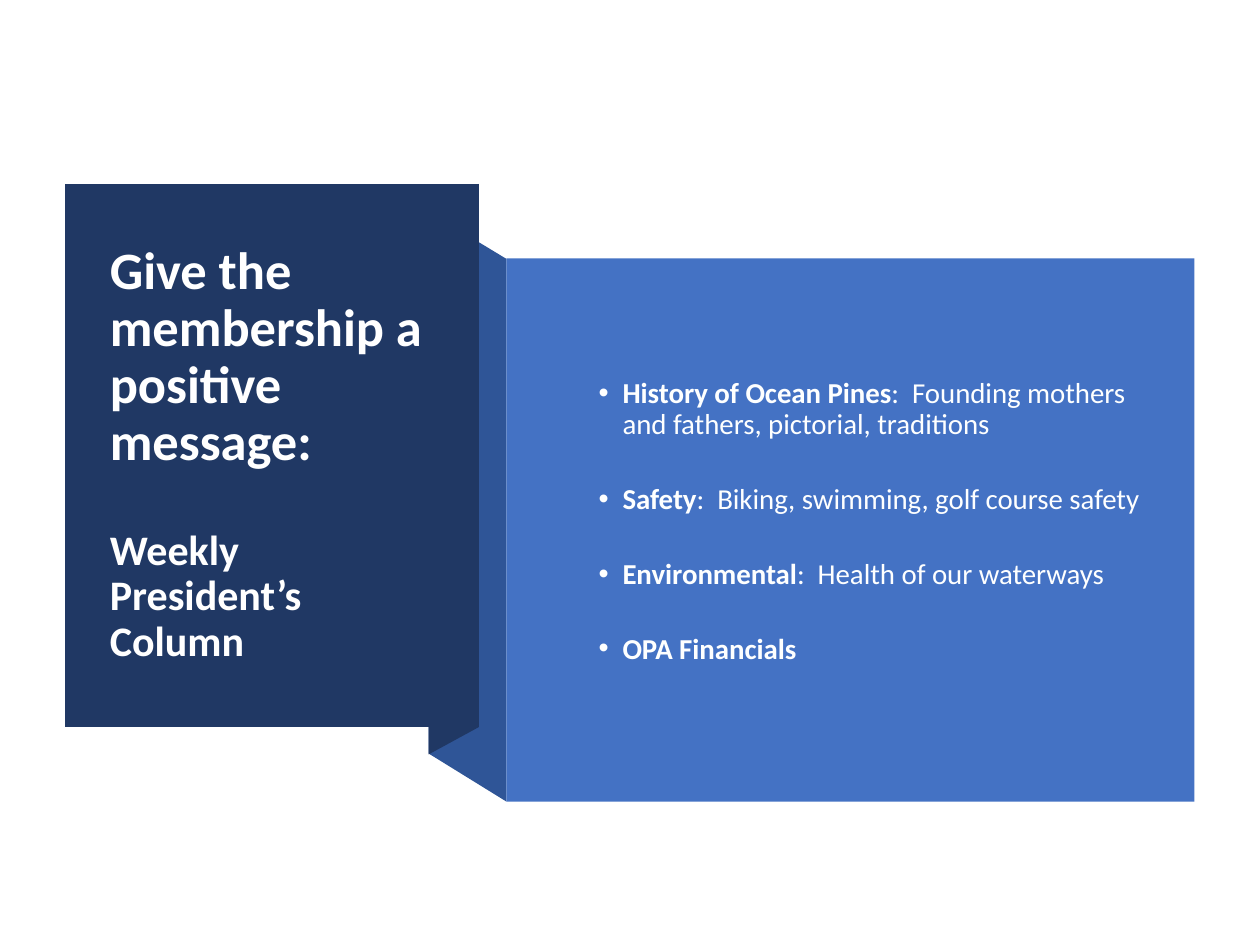
from lxml import etree
from pptx import Presentation
from pptx.dml.color import RGBColor
from pptx.enum.shapes import MSO_SHAPE
from pptx.enum.text import MSO_ANCHOR, MSO_AUTO_SIZE, PP_ALIGN
from pptx.oxml.ns import qn
from pptx.util import Cm, Pt

FONT = "Calibri"
COLORS = {"navy": "203864", "fold": "2F5597", "panel": "4472C4",
          "title": "FFFFFF", "body": "FEFFFF"}

# Content: (text, size, space before)
TITLE = [("Give the membership a positive message:", 30, 0),
         ("Weekly President’s Column", 24, 33)]
TOPICS = [("History of Ocean Pines", ":  Founding mothers and fathers, pictorial, traditions"),
          ("Safety", ":  Biking, swimming, golf course safety"),
          ("Environmental", ":  Health of our waterways"),
          ("OPA Financials", "")]
TOPIC_SIZE, TOPIC_GAP = 16.5, 25

# Ribbon edges in cm
CARD_LEFT, CARD_RIGHT, CARD_TOP, CARD_BOTTOM = 1.32, 9.65, 3.71, 14.66
FOLD_LEFT, PANEL_LEFT = 8.64, 10.21
PANEL_TOP, PANEL_WIDTH, PANEL_HEIGHT = 5.21, 13.87, 10.95
RIBBONS = [
    ("fold", [(PANEL_LEFT, 16.16), (FOLD_LEFT, 15.19), (FOLD_LEFT, 4.27), (PANEL_LEFT, 5.22)]),
    ("navy", [(CARD_RIGHT, CARD_BOTTOM), (FOLD_LEFT, 15.21), (FOLD_LEFT, 4.24),
              (CARD_RIGHT, CARD_TOP)]),
    ("navy", [(CARD_LEFT, CARD_TOP), (CARD_RIGHT, CARD_TOP),
              (CARD_RIGHT, CARD_BOTTOM), (CARD_LEFT, CARD_BOTTOM)]),
]


def paint(shape, color):
    shape.shadow.inherit = False
    shape.fill.solid()
    shape.fill.fore_color.rgb = RGBColor.from_string(COLORS[color])
    shape.line.fill.background()


def prepare(frame):
    frame.word_wrap = True
    frame.auto_size = MSO_AUTO_SIZE.NONE
    frame.vertical_anchor = MSO_ANCHOR.MIDDLE


def add_para(frame, index, space_before):
    para = frame.add_paragraph() if index else frame.paragraphs[0]
    para.alignment = PP_ALIGN.LEFT
    para.line_spacing = 0.9
    para.space_before = Pt(space_before if index else 0)
    para.space_after = Pt(0)
    return para


def add_run(para, text, size, color, bold):
    span = para.add_run()
    span.text = text
    span.font.name = FONT
    span.font.size = Pt(size)
    span.font.bold = bold
    span.font.color.rgb = RGBColor.from_string(COLORS[color])


def add_bullet(para):
    props = para._p.get_or_add_pPr()
    props.set("marL", str(Cm(1.43)))
    props.set("indent", str(-Cm(0.48)))
    etree.SubElement(props, qn("a:buFont")).set("typeface", "Arial")
    etree.SubElement(props, qn("a:buChar")).set("char", "•")


def main():
    deck = Presentation()
    deck.slide_width, deck.slide_height = Cm(25.4), Cm(19.05)
    slide = deck.slides.add_slide(deck.slide_layouts[5])
    shapes = slide.shapes

    # Folded ribbon and card
    for color, points in RIBBONS:
        corners = [(Cm(x), Cm(y)) for x, y in points]
        builder = shapes.build_freeform(*corners[0])
        builder.add_line_segments(corners[1:], close=True)
        paint(builder.convert_to_shape(), color)

    # Title, moved in front of the card
    title = shapes.title
    title.left, title.top, title.width, title.height = Cm(1.96), Cm(4.42), Cm(7.06), Cm(9.5)
    shapes._spTree.append(title._element)
    prepare(title.text_frame)
    for index, (text, size, gap) in enumerate(TITLE):
        add_run(add_para(title.text_frame, index, gap), text, size, "title", True)

    # Topic panel
    panel = shapes.add_shape(MSO_SHAPE.RECTANGLE, Cm(PANEL_LEFT), Cm(PANEL_TOP),
                             Cm(PANEL_WIDTH), Cm(PANEL_HEIGHT))
    paint(panel, "panel")

    # Topics
    box = shapes.add_textbox(Cm(10.87), Cm(6.0), Cm(12.4), Cm(9.04))
    prepare(box.text_frame)
    for index, (topic, detail) in enumerate(TOPICS):
        para = add_para(box.text_frame, index, TOPIC_GAP)
        add_bullet(para)
        add_run(para, topic, TOPIC_SIZE, "body", True)
        if detail:
            add_run(para, detail, TOPIC_SIZE, "body", False)

    deck.save("out.pptx")


if __name__ == "__main__":
    main()
